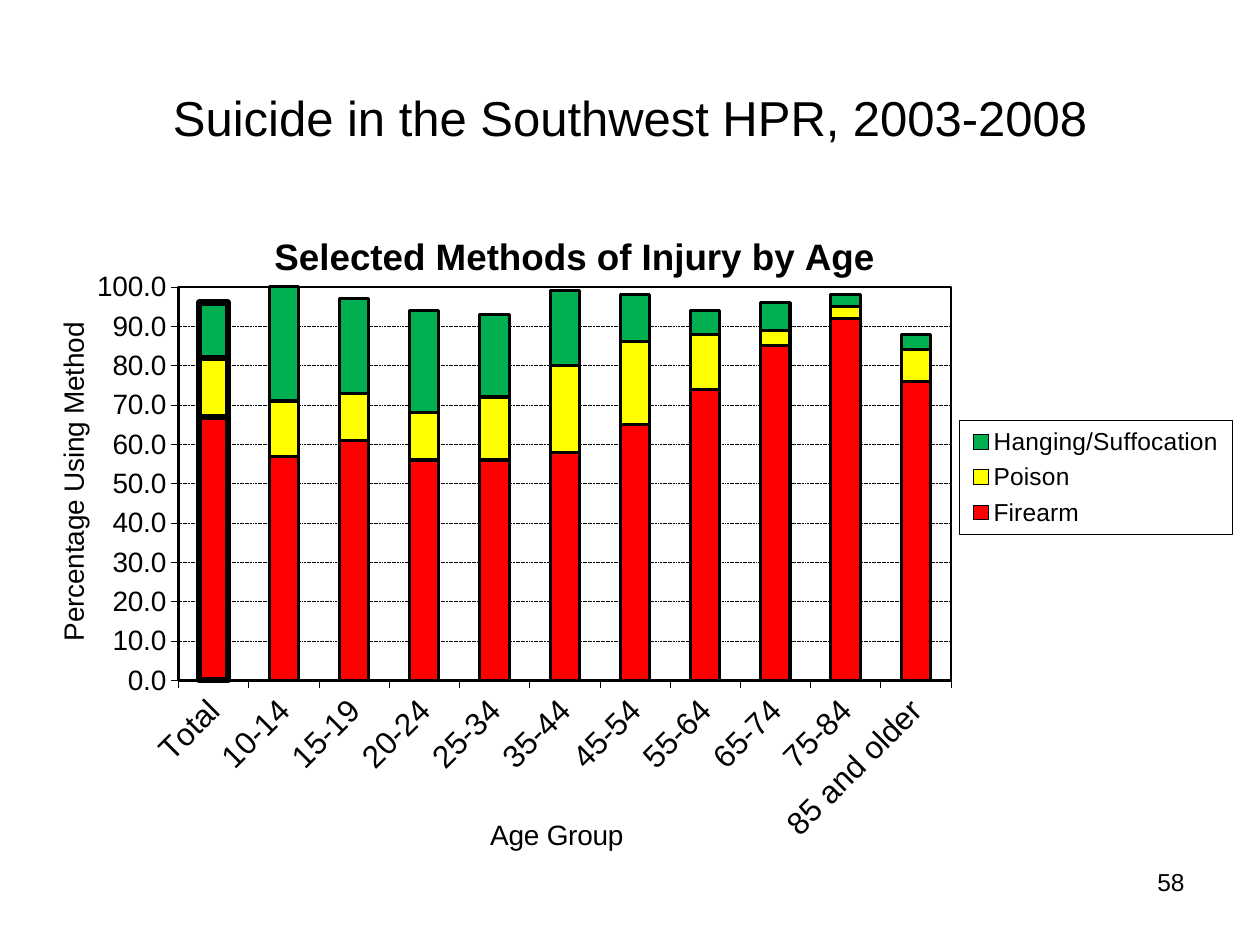
import dataclasses

import pptx
import pptx.chart.data
import pptx.dml.color
import pptx.enum.chart
import pptx.enum.dml
import pptx.enum.text
import pptx.oxml
import pptx.oxml.ns
import pptx.util

Inches = pptx.util.Inches
Pt = pptx.util.Pt
Align = pptx.enum.text.PP_ALIGN
Anchor = pptx.enum.text.MSO_ANCHOR


@dataclasses.dataclass(frozen=True)
class Theme:
    font: str = "Arial"
    ink: str = "000000"
    firearm: str = "FF0000"
    poison: str = "FFFF00"
    hanging: str = "00B050"
    heading: int = 28
    chart_title: int = 21
    category: int = 18
    axis: int = 16
    small: int = 14
    hairline: float = 0.38
    frame: float = 1.5
    outline: float = 1.75
    total_outline: float = 3.5


AGES = ["Total", "10-14", "15-19", "20-24", "25-34", "35-44", "45-54",
        "55-64", "65-74", "75-84", "85 and older"]
METHODS = {
    "Firearm": [67, 57, 61, 56, 56, 58, 65, 74, 85, 92, 76],
    "Poison": [15, 14, 12, 12, 16, 22, 21, 14, 4, 3, 8],
    "Hanging/Suffocation": [14, 29, 24, 26, 21, 19, 12, 6, 7, 3, 4],
}


def place(parent, after, x, y, width=None, height=None, inner=False):
    """Set a manual chart layout, in fractions of the chart area."""
    for old in parent.xpath("c:layout"):
        parent.remove(old)
    settings = [("layoutTarget", "inner")] if inner else []
    settings += [("xMode", "edge"), ("yMode", "edge"), ("x", x), ("y", y)]
    if width:
        settings += [("w", width), ("h", height)]
    body = "".join(f'<c:{tag} val="{value}"/>' for tag, value in settings)
    layout = pptx.oxml.parse_xml(
        f'<c:layout {pptx.oxml.ns.nsdecls("c")}><c:manualLayout>{body}'
        "</c:manualLayout></c:layout>")
    if after:
        parent.xpath(after)[0].addnext(layout)
    else:
        parent.insert(0, layout)


def add_frame(parent, anchor, width, ink):
    """Outline a chart part that has no formatting object of its own."""
    frame = pptx.oxml.parse_xml(
        f'<c:spPr {pptx.oxml.ns.nsdecls("c", "a")}><a:noFill/>'
        f'<a:ln w="{Pt(width)}"><a:solidFill><a:srgbClr val="{ink}"/>'
        "</a:solidFill></a:ln></c:spPr>")
    parent.xpath(anchor)[-1].addnext(frame)


class SlideBuilder:
    def __init__(self, page, theme):
        self.page = page
        self.theme = theme

    def style_font(self, font, size, bold=False):
        font.name = self.theme.font
        font.size = Pt(size)
        font.bold = bold
        font.color.rgb = pptx.dml.color.RGBColor.from_string(self.theme.ink)

    def style_line(self, line, width):
        line.color.rgb = pptx.dml.color.RGBColor.from_string(self.theme.ink)
        line.width = Pt(width)

    def text(self, words, left, top, width, height, size, align, anchor):
        box = self.page.shapes.add_textbox(
            Inches(left), Inches(top), Inches(width), Inches(height))
        frame = box.text_frame
        frame.word_wrap = True
        frame.vertical_anchor = anchor
        frame.text = words
        para = frame.paragraphs[0]
        para.alignment = align
        self.style_font(para.runs[0].font, size)

    def chart_label(self, label, words, size, x, y, bold=False):
        """Fill and place a chart title or an axis title."""
        label.text_frame.text = words
        span = label.text_frame.paragraphs[0].runs[0]
        self.style_font(span.font, size, bold)
        place(label.element, "c:tx", x, y)

    def stacked_columns(self, left, top, width, height, colors):
        data = pptx.chart.data.CategoryChartData(number_format="0.0")
        data.categories = AGES
        for name, values in METHODS.items():
            data.add_series(name, values)
        chart = self.page.shapes.add_chart(
            pptx.enum.chart.XL_CHART_TYPE.COLUMN_STACKED, Inches(left),
            Inches(top), Inches(width), Inches(height), data).chart
        self.style_font(chart.font, self.theme.axis)
        plot = chart.plots[0]
        plot.gap_width = 140
        plot.overlap = 100
        plot.vary_by_categories = False
        for series, color in zip(plot.series, colors):
            total = series.points[0].format
            for part, line_width in ((series.format, self.theme.outline),
                                     (total, self.theme.total_outline)):
                part.fill.solid()
                part.fill.fore_color.rgb = (
                    pptx.dml.color.RGBColor.from_string(color))
                self.style_line(part.line, line_width)
            series.invert_if_negative = False
        chart.has_title = True
        self.chart_label(chart.chart_title, "Selected Methods of Injury by Age",
                         self.theme.chart_title, 0.2, 0.04, bold=True)
        area = chart.element.xpath(".//c:plotArea")[0]
        place(area, None, 0.126, 0.126, 0.64, 0.565, inner=True)
        add_frame(area, "*", self.theme.frame, self.theme.ink)
        self.axes(chart)
        self.legend(chart)

    def axes(self, chart):
        ages, percent = chart.category_axis, chart.value_axis
        for axis, size in ((ages, self.theme.category),
                           (percent, self.theme.axis)):
            self.style_font(axis.tick_labels.font, size)
            self.style_line(axis.format.line, self.theme.hairline)
            axis.major_tick_mark = pptx.enum.chart.XL_TICK_MARK.OUTSIDE
        self.chart_label(ages.axis_title, "Age Group", self.theme.axis,
                         0.38, 0.88)
        self.chart_label(percent.axis_title, "Percentage Using Method",
                         self.theme.axis, 0.02, 0.17)
        percent.minimum_scale = 0
        percent.maximum_scale = 100
        percent.major_unit = 10
        percent.tick_labels.number_format = "0.0"
        percent.tick_labels.number_format_is_linked = False
        percent.has_major_gridlines = True
        grid = percent.major_gridlines.format.line
        self.style_line(grid, self.theme.hairline)
        grid.dash_style = pptx.enum.dml.MSO_LINE.SQUARE_DOT
        for query, degrees in ((".//c:catAx/c:txPr/a:bodyPr", -45),
                               (".//c:valAx/c:title//a:bodyPr", -90)):
            body = chart.element.xpath(query)[0]
            body.set("rot", str(degrees * 60000))
            body.set("vert", "horz")

    def legend(self, chart):
        chart.has_legend = True
        chart.legend.position = pptx.enum.chart.XL_LEGEND_POSITION.RIGHT
        chart.legend.include_in_layout = False
        self.style_font(chart.legend.font, self.theme.small)
        element = chart.element.xpath(".//c:legend")[0]
        place(element, "c:legendPos", 0.773, 0.318, 0.226, 0.163)
        add_frame(element, "c:overlay", self.theme.hairline, self.theme.ink)


def main():
    theme = Theme()
    deck = pptx.Presentation()
    deck.slide_width = Inches(10)
    deck.slide_height = Inches(7.5)
    builder = SlideBuilder(deck.slides.add_slide(deck.slide_layouts[6]), theme)
    builder.text("58", 7.17, 6.83, 2.33, 0.52, theme.small,
                 Align.RIGHT, Anchor.TOP)
    builder.text("Suicide in the Southwest HPR, 2003-2008", 0.5, 0.3, 9, 1.25,
                 theme.heading, Align.CENTER, Anchor.MIDDLE)
    builder.stacked_columns(0.21, 1.58, 9.58, 5.53,
                            (theme.firearm, theme.poison, theme.hanging))
    deck.save("out.pptx")


if __name__ == "__main__":
    main()
